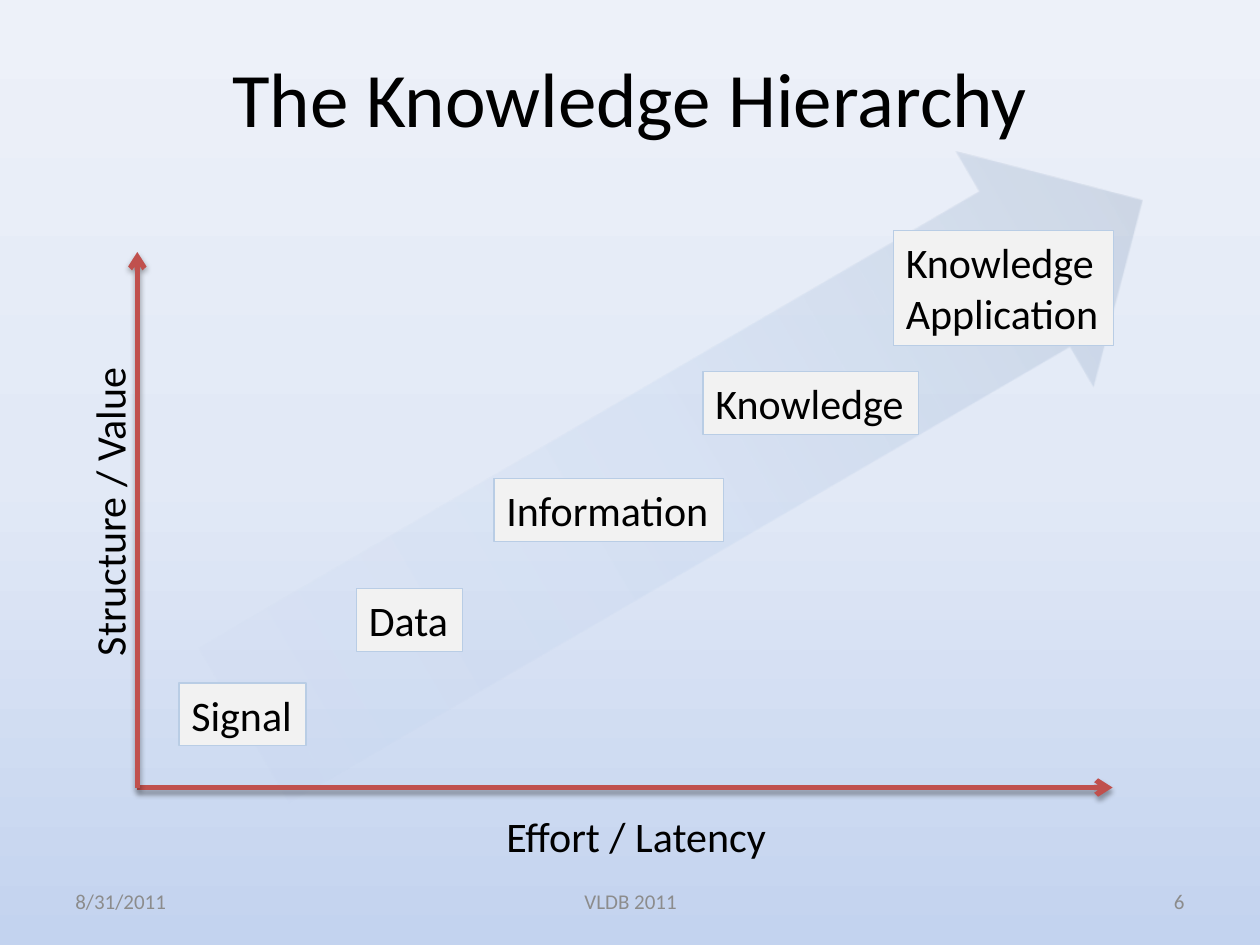
from lxml.etree import SubElement
from pptx import Presentation
from pptx.dml.color import RGBColor
from pptx.enum.shapes import MSO_CONNECTOR, MSO_SHAPE
from pptx.enum.text import MSO_ANCHOR, MSO_AUTO_SIZE, PP_ALIGN
from pptx.oxml.ns import qn
from pptx.util import Inches, Pt

# Content: text and (left, top, width, height) in inches
TITLE = "The Knowledge Hierarchy"
STEPS = [
    ("Signal", (1.42, 5.42, 1.01, 0.5)),
    ("Data", (2.83, 4.67, 0.84, 0.5)),
    ("Information", (3.92, 3.8, 1.82, 0.5)),
    ("Knowledge", (5.58, 2.95, 1.71, 0.5)),
    ("Knowledge\nApplication", (7.09, 1.83, 1.75, 0.91)),
]
AXIS_LABELS = [
    ("Effort / Latency", (3.92, 6.38, 2.29, 0.5), 0),
    ("Structure / Value", (-0.39, 3.8, 2.51, 0.5), 270),
]
ORIGIN = (1.09, 6.25)
AXIS_ENDS = [(8.83, 6.25), (1.09, 2)]
FOOTERS = [
    ("8/31/2011", 0.5, 2.33, PP_ALIGN.LEFT),
    ("VLDB 2011", 3.42, 3.17, PP_ALIGN.CENTER),
    ("6", 7.17, 2.33, PP_ALIGN.RIGHT),
]
# Gradient stops: position %, colour, opacity %
BACKGROUND = [(0, "C3D3EF", 100), (50, "E2E9F6", 100), (100, "EDF1F9", 100)]
ARROW = [(0, "17375E", 15), (50, "558ED5", 7), (100, "95B3D7", 0)]


def color(value):
    return RGBColor.from_string(value)


def box(lengths):
    return [Inches(length) for length in lengths]


def add_child(parent, tag, **attributes):
    return SubElement(parent, qn(tag), {k: str(v) for k, v in attributes.items()})


def add_color(parent, value, opacity):
    node = add_child(parent, "a:srgbClr", val=value)
    add_child(node, "a:alpha", val=opacity * 1000)


def set_gradient(fill, element, stops, angle):
    fill.gradient()
    gradient = next(element.iter(qn("a:gradFill")))
    stop_list = gradient.find(qn("a:gsLst"))
    for stop in list(stop_list):
        stop_list.remove(stop)
    for position, value, opacity in stops:
        stop = add_child(stop_list, "a:gs", pos=position * 1000)
        add_color(stop, value, opacity)
    gradient.find(qn("a:lin")).set("ang", str(angle * 60000))


def write(shape, text, size=24, ink="000000", align=PP_ALIGN.LEFT,
          anchor=MSO_ANCHOR.TOP, grow=True):
    frame = shape.text_frame
    frame.text = text
    frame.word_wrap = not grow
    frame.auto_size = MSO_AUTO_SIZE.SHAPE_TO_FIT_TEXT if grow else MSO_AUTO_SIZE.NONE
    frame.vertical_anchor = anchor
    for paragraph in frame.paragraphs:
        paragraph.alignment = align
        font = paragraph.font if not paragraph.runs else paragraph.runs[0].font
        font.name, font.size = "Calibri", Pt(size)
        font.color.rgb = color(ink)


def add_axis(shapes, start, end):
    axis = shapes.add_connector(MSO_CONNECTOR.STRAIGHT, *box(start + end))
    axis.line.color.rgb = color("C0504D")
    axis.line.width = Pt(3)
    add_child(axis.line._get_or_add_ln(), "a:tailEnd", type="arrow")
    effects = add_child(axis._element.spPr, "a:effectLst")
    shadow = add_child(effects, "a:outerShdw", blurRad=Pt(3.1), dist=Pt(1.8),
                       dir=90 * 60000, rotWithShape=0)
    add_color(shadow, "000000", 35)


def main():
    presentation = Presentation()
    presentation.slide_width, presentation.slide_height = Inches(10), Inches(7.5)
    slide = presentation.slides.add_slide(presentation.slide_layouts[5])
    shapes = slide.shapes
    set_gradient(slide.background.fill, slide._element, BACKGROUND, 270)

    # Title
    title = shapes.title
    title.left, title.top, title.width, title.height = box((0.5, 0.25, 9, 1.03))
    write(title, TITLE, size=44, align=PP_ALIGN.CENTER,
          anchor=MSO_ANCHOR.MIDDLE, grow=False)

    # Rising arrow behind the steps
    arrow = shapes.add_shape(MSO_SHAPE.RIGHT_ARROW, *box((1.37, 2.59, 8.26, 2.17)))
    arrow.rotation = 329.7
    arrow.adjustments[0], arrow.adjustments[1] = 0.658, 0.5
    arrow.shadow.inherit = False
    arrow.line.fill.background()
    set_gradient(arrow.fill, arrow._element, ARROW, 180)

    # Axes and their labels
    for end in AXIS_ENDS:
        add_axis(shapes, ORIGIN, end)
    for text, place, rotation in AXIS_LABELS:
        label = shapes.add_textbox(*box(place))
        label.rotation = rotation
        write(label, text)

    # Steps of the hierarchy
    for text, place in STEPS:
        step = shapes.add_shape(MSO_SHAPE.RECTANGLE, *box(place))
        step.shadow.inherit = False
        step.fill.solid()
        step.fill.fore_color.rgb = color("F2F2F2")
        step.line.color.rgb = color("B9CDE5")
        step.line.width = Pt(0.75)
        write(step, text)

    # Footer row
    for text, left, width, align in FOOTERS:
        footer = shapes.add_textbox(*box((left, 6.95, width, 0.4)))
        write(footer, text, size=12, ink="8C8C8C", align=align,
              anchor=MSO_ANCHOR.MIDDLE, grow=False)

    presentation.save("out.pptx")


if __name__ == "__main__":
    main()
